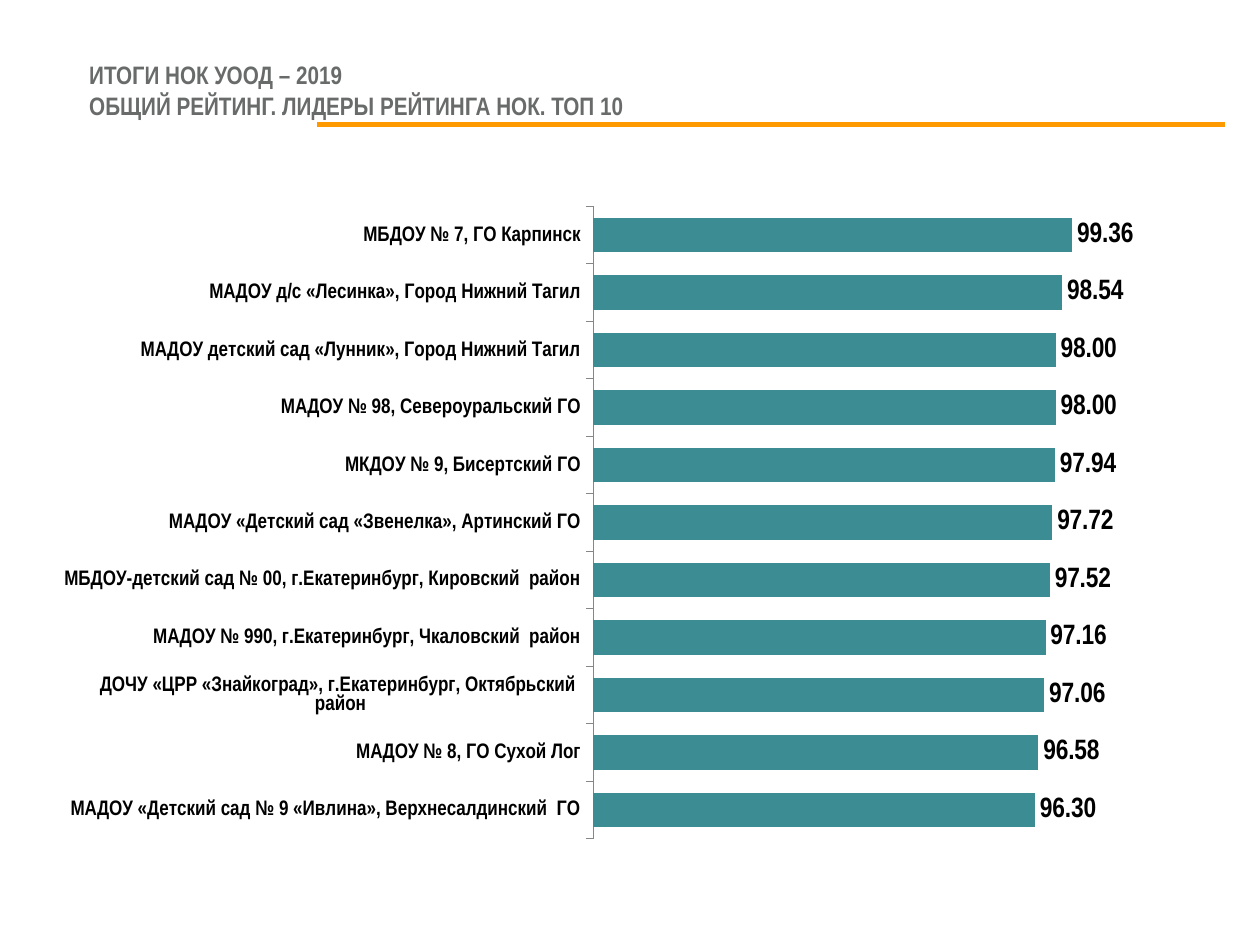
import pptx
import pptx.chart.data
import pptx.dml.color
import pptx.enum.chart
import pptx.enum.shapes
import pptx.enum.text
import pptx.oxml
import pptx.oxml.ns
import pptx.util
from pptx.util import Inches

FONT = "Arial Narrow"
COLORS = {"title": "696B6B", "rule": "FF9900", "bar": "3C8C93", "text": "000000", "axis": "868686"}
TITLE_LINES = ["ИТОГИ НОК УООД – 2019", "ОБЩИЙ РЕЙТИНГ. ЛИДЕРЫ РЕЙТИНГА НОК. ТОП 10"]
RATING = [
    ("МБДОУ № 7, ГО Карпинск", 99.36),
    ("МАДОУ д/с «Лесинка», Город Нижний Тагил", 98.54),
    ("МАДОУ детский сад «Лунник», Город Нижний Тагил", 98.00),
    ("МАДОУ № 98, Североуральский ГО", 98.00),
    ("МКДОУ № 9, Бисертский ГО", 97.94),
    ("МАДОУ «Детский сад «Звенелка», Артинский ГО", 97.72),
    ("МБДОУ-детский сад № 00, г.Екатеринбург, Кировский  район", 97.52),
    ("МАДОУ № 990, г.Екатеринбург, Чкаловский  район", 97.16),
    ("ДОЧУ «ЦРР «Знайкоград», г.Екатеринбург, Октябрьский  район", 97.06),
    ("МАДОУ № 8, ГО Сухой Лог", 96.58),
    ("МАДОУ «Детский сад № 9 «Ивлина», Верхнесалдинский  ГО", 96.30),
]
PLOT_AREA = {"x": 0.463, "y": 0.045, "w": 0.434, "h": 0.911}


def rgb(name):
    return pptx.dml.color.RGBColor.from_string(COLORS[name])


def style_font(font, size, color, bold=True):
    font.name = FONT
    font.size = pptx.util.Pt(size)
    font.bold = bold
    font.color.rgb = rgb(color)


def add_title(slide):
    frame = slide.shapes.add_textbox(Inches(0.61), Inches(0.43), Inches(9), Inches(0.57)).text_frame
    frame.word_wrap = True
    frame.vertical_anchor = pptx.enum.text.MSO_ANCHOR.MIDDLE
    paragraph = frame.paragraphs[0]
    for index, line in enumerate(TITLE_LINES):
        if index:
            paragraph.add_line_break()
        run = paragraph.add_run()
        run.text = line
        style_font(run.font, 14.4, "title")


def add_rule(slide):
    rule = slide.shapes.add_connector(
        pptx.enum.shapes.MSO_CONNECTOR.STRAIGHT, Inches(2.52), Inches(0.99), Inches(9.72), Inches(0.99)
    )
    rule.line.color.rgb = rgb("rule")
    rule.line.width = pptx.util.Pt(3)
    properties = rule._element.spPr
    properties.append(properties.makeelement(pptx.oxml.ns.qn("a:effectLst")))


def place_plot_area(chart):
    plot_area = chart._chartSpace.chart.plotArea
    for layout in plot_area.findall(pptx.oxml.ns.qn("c:layout")):
        plot_area.remove(layout)
    modes = '<c:layoutTarget val="inner"/><c:xMode val="edge"/><c:yMode val="edge"/>'
    sizes = "".join(f'<c:{key} val="{value}"/>' for key, value in PLOT_AREA.items())
    plot_area.insert(0, pptx.oxml.parse_xml(
        f'<c:layout {pptx.oxml.ns.nsdecls("c")}><c:manualLayout>{modes}{sizes}</c:manualLayout></c:layout>'
    ))


def add_rating_chart(slide):
    data = pptx.chart.data.CategoryChartData(number_format="0.00")
    data.categories = [name for name, score in RATING]
    data.add_series("Series 1", [score for name, score in RATING])
    chart = slide.shapes.add_chart(
        pptx.enum.chart.XL_CHART_TYPE.BAR_CLUSTERED,
        Inches(0.51), Inches(1.39), Inches(8.98), Inches(5.51), data,
    ).chart
    chart.has_legend = False
    chart.has_title = False
    style_font(chart.font, 14, "text", bold=False)

    names = chart.category_axis
    names.reverse_order = True
    names.has_major_gridlines = False
    names.major_tick_mark = pptx.enum.chart.XL_TICK_MARK.OUTSIDE
    names.format.line.color.rgb = rgb("axis")
    names.format.line.width = pptx.util.Pt(0.75)
    style_font(names.tick_labels.font, 12, "text")

    scores = chart.value_axis
    scores.minimum_scale, scores.maximum_scale, scores.major_unit = 60, 100, 10
    scores.has_major_gridlines = False
    scores.visible = False

    plot = chart.plots[0]
    plot.gap_width = 68
    plot.vary_by_categories = False
    series = plot.series[0]
    series.format.fill.solid()
    series.format.fill.fore_color.rgb = rgb("bar")
    labels = series.data_labels
    labels.show_value = True
    labels.number_format = "#,##0.00"
    labels.number_format_is_linked = False
    labels.position = pptx.enum.chart.XL_LABEL_POSITION.OUTSIDE_END
    style_font(labels.font, 16, "text")
    place_plot_area(chart)


def main():
    presentation = pptx.Presentation()
    presentation.slide_width, presentation.slide_height = Inches(10), Inches(7.5)
    slide = presentation.slides.add_slide(presentation.slide_layouts[6])
    add_title(slide)
    add_rule(slide)
    add_rating_chart(slide)
    presentation.save("out.pptx")


if __name__ == "__main__":
    main()
